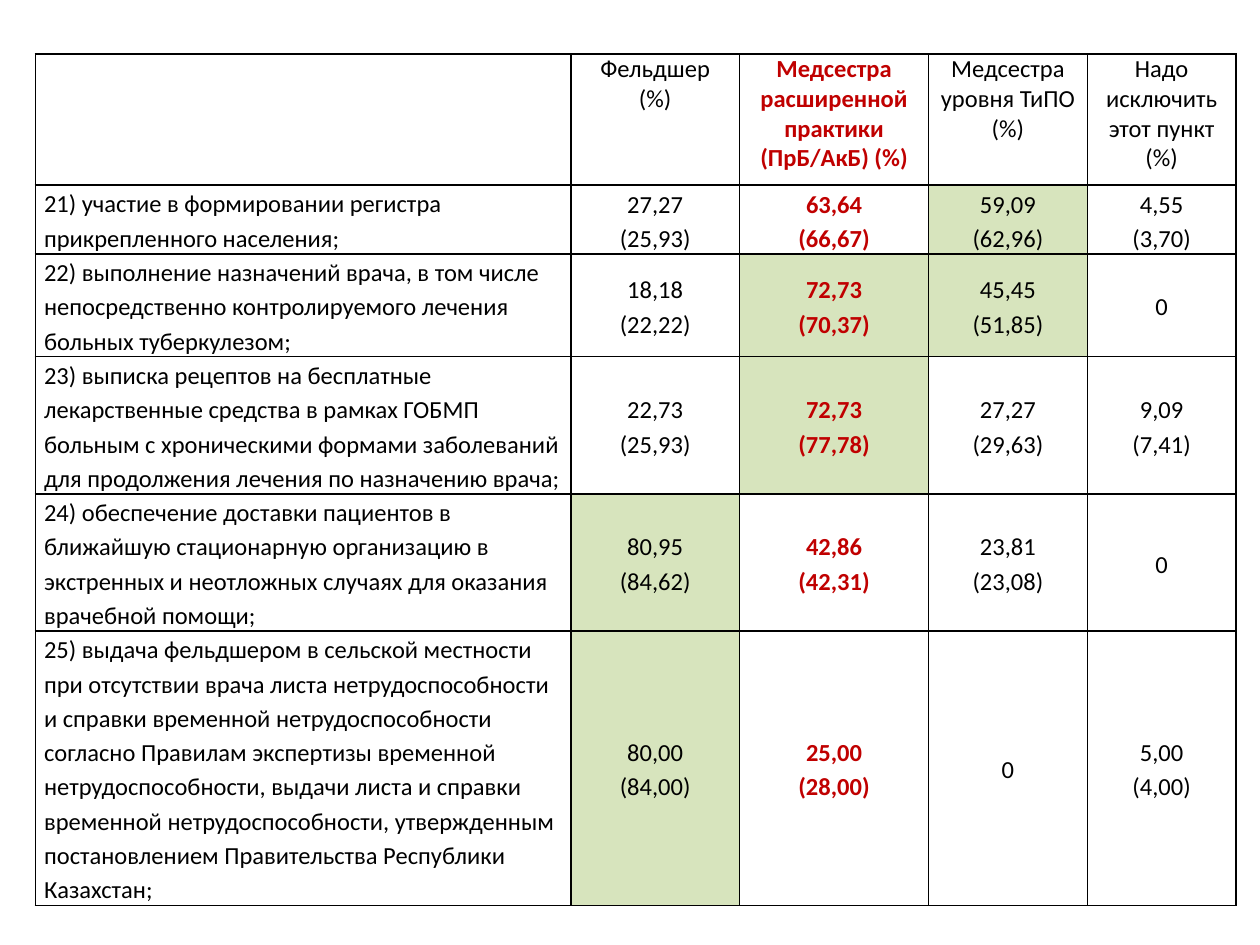
from dataclasses import dataclass

from lxml import etree
from pptx import Presentation
from pptx.dml.color import RGBColor
from pptx.enum.text import MSO_ANCHOR, PP_ALIGN
from pptx.oxml.ns import qn
from pptx.table import _Cell
from pptx.util import Inches, Pt

LEFT, CENTER = PP_ALIGN.LEFT, PP_ALIGN.CENTER
TOP, MIDDLE = MSO_ANCHOR.TOP, MSO_ANCHOR.MIDDLE

COLORS = {"text": "000000", "accent": "C00000", "highlight": "D7E4BD", "border": "000000"}
FONT = "Calibri"
COLUMN_WIDTHS = (4.25, 1.34, 1.5, 1.26, 1.18)
HEADER_HEIGHT = 1.04
LINE_HEIGHT = 0.27
ACCENT_COLUMN = 2


@dataclass(frozen=True)
class Duty:
    text: str
    lines: int
    shares: tuple[str, ...]
    highlighted: tuple[int, ...]


HEADERS = (
    "",
    "Фельдшер\n(%)",
    "Медсестра расширенной практики (ПрБ/АкБ) (%)",
    "Медсестра уровня ТиПО\n(%)",
    "Надо исключить этот пункт\n(%)",
)

DUTIES = (
    Duty("21) участие в формировании регистра прикрепленного населения;", 2,
         ("27,27\n(25,93)", "63,64\n(66,67)", "59,09\n(62,96)", "4,55\n(3,70)"), (3,)),
    Duty("22) выполнение назначений врача, в том числе непосредственно "
         "контролируемого лечения больных туберкулезом;", 3,
         ("18,18\n(22,22)", "72,73\n(70,37)", "45,45\n(51,85)", "0"), (2, 3)),
    Duty("23) выписка рецептов на бесплатные лекарственные средства в рамках ГОБМП "
         "больным с хроническими формами заболеваний для продолжения лечения "
         "по назначению врача;", 4,
         ("22,73\n(25,93)", "72,73\n(77,78)", "27,27\n(29,63)", "9,09\n(7,41)"), (2,)),
    Duty("24) обеспечение доставки пациентов в ближайшую стационарную организацию "
         "в экстренных и неотложных случаях для оказания врачебной помощи;", 4,
         ("80,95\n(84,62)", "42,86\n(42,31)", "23,81\n(23,08)", "0"), (1,)),
    Duty("25) выдача фельдшером в сельской местности при отсутствии врача листа "
         "нетрудоспособности и справки временной нетрудоспособности согласно Правилам "
         "экспертизы временной нетрудоспособности, выдачи листа и справки временной "
         "нетрудоспособности, утвержденным постановлением Правительства Республики "
         "Казахстан;", 8,
         ("80,00\n(84,00)", "25,00\n(28,00)", "0", "5,00\n(4,00)"), (1,)),
)


def set_borders(cell: _Cell, color: str, width: float = 1) -> None:
    """Outline all four sides; the lines must precede the fill in the cell XML."""
    properties = cell._tc.get_or_add_tcPr()
    for position, side in enumerate(("a:lnL", "a:lnR", "a:lnT", "a:lnB")):
        line = etree.Element(qn(side), w=str(Pt(width)))
        fill = etree.SubElement(line, qn("a:solidFill"))
        etree.SubElement(fill, qn("a:srgbClr"), val=color)
        properties.insert(position, line)


def write_cell(cell: _Cell, text: str, *, accent: bool = False, highlight: bool = False,
               align: PP_ALIGN = CENTER, anchor: MSO_ANCHOR = MIDDLE,
               inset: float = 0.07, spacing: float = 1.15) -> None:
    cell.margin_left = cell.margin_right = Inches(inset)
    cell.margin_top = cell.margin_bottom = Inches(0)
    cell.vertical_anchor = anchor
    if highlight:
        cell.fill.solid()
        cell.fill.fore_color.rgb = RGBColor.from_string(COLORS["highlight"])
    else:
        cell.fill.background()
    set_borders(cell, COLORS["border"])
    if not text:
        return
    cell.text_frame.text = text
    for para in cell.text_frame.paragraphs:
        para.alignment = align
        para.line_spacing = spacing
        for span in para.runs:
            span.font.name = FONT
            span.font.size = Pt(14)
            span.font.bold = accent
            span.font.color.rgb = RGBColor.from_string(COLORS["accent" if accent else "text"])


def main() -> None:
    deck = Presentation()
    deck.slide_width, deck.slide_height = Inches(10), Inches(7.5)
    page = deck.slides.add_slide(deck.slide_layouts[6])

    heights = [HEADER_HEIGHT] + [duty.lines * LINE_HEIGHT for duty in DUTIES]
    table = page.shapes.add_table(
        len(heights), len(COLUMN_WIDTHS), Inches(0.28), Inches(0.43),
        Inches(sum(COLUMN_WIDTHS)), Inches(sum(heights))).table
    table.first_row = table.horz_banding = False
    for column, width in zip(table.columns, COLUMN_WIDTHS):
        column.width = Inches(width)
    for row, height in zip(table.rows, heights):
        row.height = Inches(height)

    for column, header in enumerate(HEADERS):
        write_cell(table.cell(0, column), header, accent=column == ACCENT_COLUMN,
                   anchor=TOP, inset=0.05, spacing=1.0)
    for row, duty in enumerate(DUTIES, start=1):
        write_cell(table.cell(row, 0), duty.text, align=LEFT, anchor=TOP)
        for column, share in enumerate(duty.shares, start=1):
            write_cell(table.cell(row, column), share, accent=column == ACCENT_COLUMN,
                       highlight=column in duty.highlighted)

    deck.save("out.pptx")


if __name__ == "__main__":
    main()
